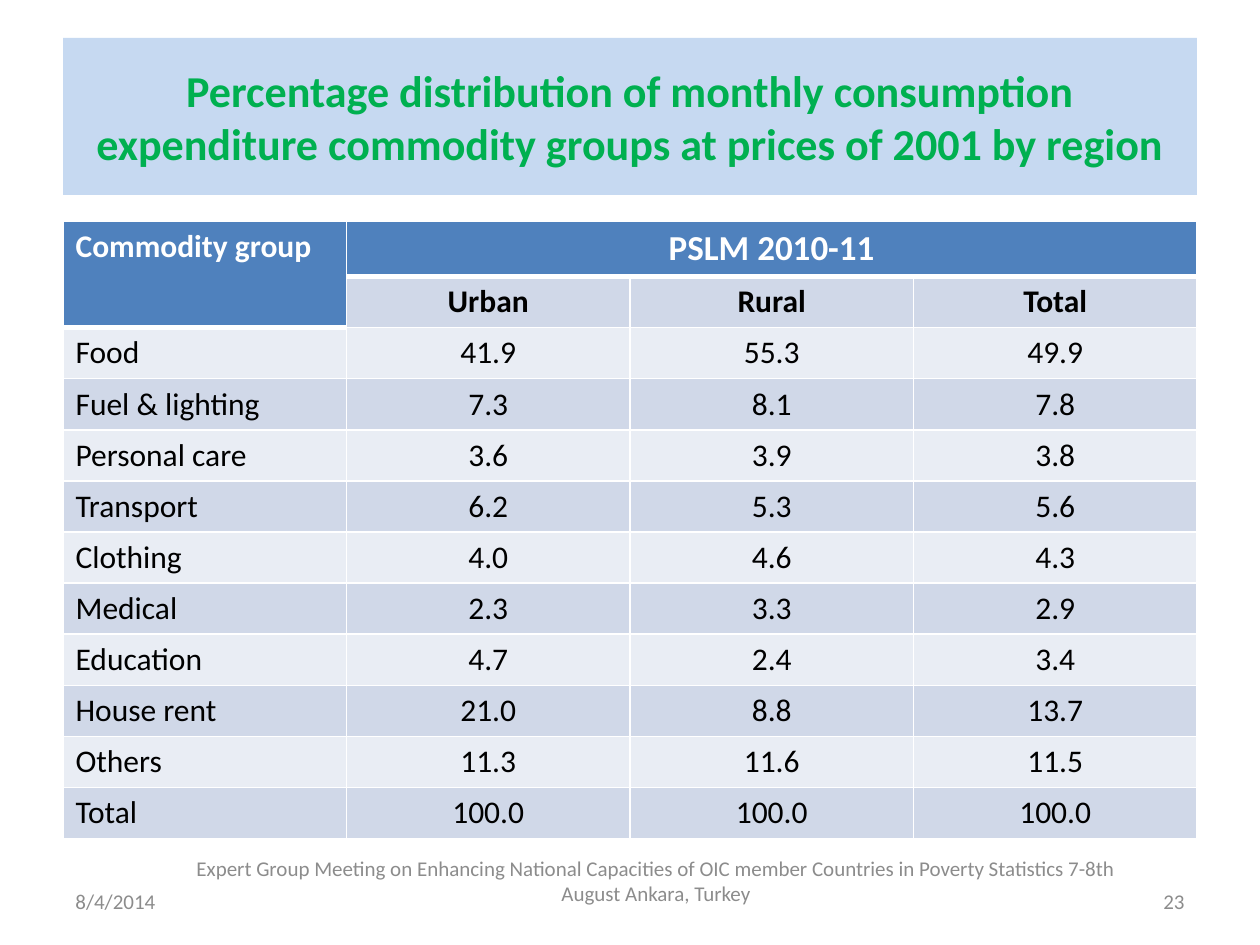
"""Build the slide on spending shares by commodity group and region."""
from lxml.etree import SubElement
from pptx import Presentation
from pptx.dml.color import RGBColor as Rgb
from pptx.enum.text import MSO_ANCHOR as Anchor, MSO_AUTO_SIZE as Fit, PP_ALIGN as Align
from pptx.oxml.ns import qn
from pptx.util import Emu, Pt

TITLE = ("Percentage distribution of monthly consumption expenditure "
         "commodity groups at prices of 2001 by region")
ROWS = [
    ("Commodity group", "PSLM 2010-11", "", ""),
    ("", "Urban", "Rural", "Total"),
    ("Food", "41.9", "55.3", "49.9"),
    ("Fuel & lighting", "7.3", "8.1", "7.8"),
    ("Personal care", "3.6", "3.9", "3.8"),
    ("Transport", "6.2", "5.3", "5.6"),
    ("Clothing", "4.0", "4.6", "4.3"),
    ("Medical", "2.3", "3.3", "2.9"),
    ("Education", "4.7", "2.4", "3.4"),
    ("House rent", "21.0", "8.8", "13.7"),
    ("Others", "11.3", "11.6", "11.5"),
    ("Total", "100.0", "100.0", "100.0"),
]
NOTES = [
    ("8/4/2014", Align.LEFT, (63, 876, 294, 50)),
    ("23", Align.RIGHT, (903, 876, 294, 50)),
    ("Expert Group Meeting on Enhancing National Capacities of OIC member "
     "Countries in Poverty Statistics 7-8th August Ankara, Turkey",
     Align.CENTER, (168, 850, 976, 61)),
]
THEME = {
    "font": "Calibri", "panel": "C6D9F1", "head": "4F81BD", "rule": "FFFFFF",
    "bands": ("E9EDF4", "D0D8E8"),
    "title": {"size": 25.2, "bold": True, "color": "00B050"},
    "group": {"size": 20, "bold": True, "color": "FFFFFF"},
    "label": {"size": 18, "bold": True, "color": "FFFFFF"},
    "region": {"size": 18, "bold": True, "color": "000000"},
    "body": {"size": 18, "bold": False, "color": "000000"},
    "note": {"size": 12, "bold": False, "color": "8C8C8C"},
}
WIDE, HIGH = 1260, 945
LEFT, SPAN = 63, 1134
TOP, HEAD, ROW = 221, 55, 51


def px(num):
    return Emu(num * 914400 // 126)


def paint(fill, color):
    fill.solid()
    fill.fore_color.rgb = Rgb.from_string(color)


def write(frame, text, style, align):
    frame.text = text
    para = frame.paragraphs[0]
    para.alignment = align
    look = THEME[style]
    form = {"name": THEME["font"], "size": Pt(look["size"]), "bold": look["bold"]}
    for key, val in form.items():
        setattr(para.font, key, val)
        for run in para.runs:
            setattr(run.font, key, val)
    for run in para.runs:
        run.font.color.rgb = Rgb.from_string(look["color"])


def place(shape, box):
    for key, val in zip(("left", "top", "width", "height"), box):
        setattr(shape, key, px(val))


def edge(cell, low):
    props = cell._tc.get_or_add_tcPr()
    for side in "LRTB":
        width = Pt(low if side == "B" else 1)
        line = SubElement(props, qn("a:ln" + side), w=str(width))
        fill = SubElement(line, qn("a:solidFill"))
        SubElement(fill, qn("a:srgbClr"), val=THEME["rule"])


def kind(row, col):
    if row > 1:
        return "body"
    if col == 0:
        return "label"
    return "region" if row else "group"


def add_grid(slide):
    count, cols = len(ROWS), len(ROWS[0])
    box = map(px, (LEFT, TOP, SPAN, HEAD + ROW * (count - 1)))
    grid = slide.shapes.add_table(count, cols, *box).table
    for row, vals in enumerate(ROWS):
        grid.rows[row].height = px(ROW if row else HEAD)
        for col, text in enumerate(vals):
            cell = grid.cell(row, col)
            style = kind(row, col)
            head = style in ("label", "group")
            edge(cell, 3 if head else 1)
            paint(cell.fill, THEME["head"] if head else THEME["bands"][row % 2])
            write(cell.text_frame, text, style, Align.CENTER if col else Align.LEFT)
    grid.cell(0, 0).merge(grid.cell(1, 0))
    grid.cell(0, 1).merge(grid.cell(0, cols - 1))


def main():
    deck = Presentation()
    deck.slide_width, deck.slide_height = px(WIDE), px(HIGH)
    slide = deck.slides.add_slide(deck.slide_layouts[5])
    title = slide.shapes.title
    place(title, (LEFT, 38, SPAN, 157))
    paint(title.fill, THEME["panel"])
    write(title.text_frame, TITLE, "title", Align.CENTER)
    form = {"vertical_anchor": Anchor.MIDDLE, "word_wrap": True, "auto_size": Fit.NONE}
    frames = [title.text_frame]
    add_grid(slide)
    for text, align, box in NOTES:
        frame = slide.shapes.add_textbox(*map(px, box)).text_frame
        write(frame, text, "note", align)
        frames.append(frame)
    for frame in frames:
        for key, val in form.items():
            setattr(frame, key, val)
    deck.save("out.pptx")


if __name__ == "__main__":
    main()
